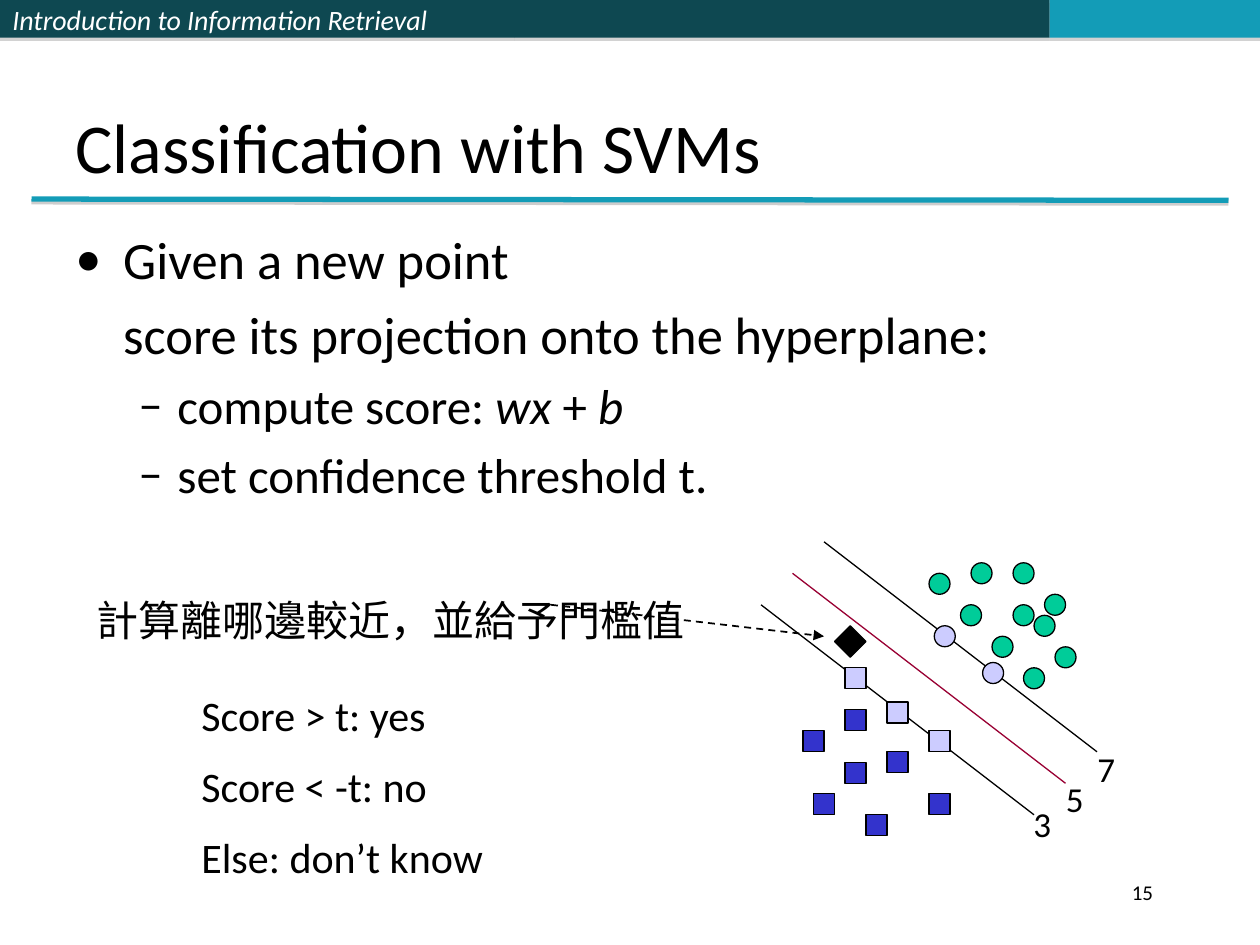
from lxml import etree
from pptx import Presentation
from pptx import util as u
from pptx.dml.color import RGBColor
from pptx.enum import dml, shapes, text
from pptx.oxml import ns

WIDTH, HEIGHT = 10, 7.5
BLACK = RGBColor(0x00, 0x00, 0x00)
WHITE = RGBColor(0xFF, 0xFF, 0xFF)
DARK_TEAL = RGBColor(0x0E, 0x48, 0x51)
TEAL = RGBColor(0x13, 0x9C, 0xB7)
GREEN = RGBColor(0x00, 0xCC, 0x99)
BLUE = RGBColor(0x33, 0x33, 0xCC)
LAVENDER = RGBColor(0xCC, 0xCC, 0xFF)
CRIMSON = RGBColor(0x99, 0x00, 0x33)

KIND = shapes.MSO_SHAPE
CELL = 1 / 12
MARKER = 2

POSITIVES = [(20, 2), (24, 6), (22, 9), (28, 10), (25, 12), (24, 2), (16, 3),
             (26, 7), (27, 5), (19, 6)]
NEGATIVES = [(8, 16), (10, 26), (12, 20), (16, 24), (4, 18), (8, 21), (5, 24)]
POSITIVE_SUPPORTS = [(16.5, 8), (21.1, 11.5)]
NEGATIVE_SUPPORTS = [(12, 15.25), (16, 18), (8, 12)]
BOUNDARIES = [((3, 3), (29, 23), CRIMSON), ((6, 0), (32, 20), BLACK),
              ((0, 6), (26, 26), BLACK)]
SCORES = [("3", 24.75, 24.25), ("5", 27.85, 21.85), ("7", 30.85, 19)]


def inches(*values):
    return [u.Inches(value) for value in values]


def child(parent, tag, **attributes):
    return etree.SubElement(parent, ns.qn(tag), attributes)


def cast_shadow(shape, opacity=35, distance=1.8):
    effects = child(shape._element.spPr, "a:effectLst")
    shadow = child(effects, "a:outerShdw", dist=str(u.Pt(distance)),
                   dir="5400000", rotWithShape="0")
    color = child(shadow, "a:srgbClr", val="808080")
    child(color, "a:alpha", val=str(opacity * 1000))


def write(paragraph, content, size=24, font="Calibri", color=BLACK,
          italic=False, align=text.PP_ALIGN.LEFT, before=0, margin=0,
          bullet=None, hanging=0):
    paragraph.alignment = align
    paragraph.space_before = u.Pt(before)
    properties = paragraph._p.get_or_add_pPr()
    properties.set("marL", str(u.Inches(margin)))
    properties.set("indent", str(u.Inches(-hanging)))
    if bullet:
        child(properties, "a:buFont", typeface="Calibri")
        child(properties, "a:buChar", char=bullet)
    runs = [(content, italic)] if isinstance(content, str) else content
    for words, slanted in runs:
        run = paragraph.add_run()
        run.text = words
        run.font.size = u.Pt(size)
        run.font.name = font
        run.font.italic = slanted
        run.font.color.rgb = color
        child(run._r.get_or_add_rPr(), "a:ea", typeface=font)


def add_text(slide, box, lines, wrap=True, anchor=text.MSO_ANCHOR.TOP, **style):
    frame = slide.shapes.add_textbox(*inches(*box)).text_frame
    frame.word_wrap = wrap
    frame.vertical_anchor = anchor
    for index, (content, extra) in enumerate(lines):
        paragraph = frame.add_paragraph() if index else frame.paragraphs[0]
        write(paragraph, content, **{**style, **extra})


def add_block(slide, kind, box, fill, outline=None):
    shape = slide.shapes.add_shape(kind, *inches(*box))
    shape.fill.solid()
    shape.fill.fore_color.rgb = fill
    if outline is None:
        shape.line.fill.background()
    else:
        shape.shadow.inherit = False
        shape.line.color.rgb = outline
        shape.line.width = u.Pt(0.75)
    return shape


def add_line(slide, start, end, color, width=0.75, shadow=False):
    line = slide.shapes.add_connector(shapes.MSO_CONNECTOR.STRAIGHT,
                                      *inches(*start, *end))
    line.line.color.rgb = color
    line.line.width = u.Pt(width)
    if shadow:
        cast_shadow(line, 38, 1.6)
    else:
        child(line._element.spPr, "a:effectLst")
    return line


def build_header(slide, left, top, width, height):
    segments = [(0, 0.408, DARK_TEAL), (0.408, 0.425, DARK_TEAL),
                (0.833, 0.167, TEAL)]
    bars = []
    for start, share, color in segments:
        box = (left + start * width, top, share * width, height)
        bar = add_block(slide, KIND.RECTANGLE, box, color)
        cast_shadow(bar)
        bars.append(bar)
    frame = bars[0].text_frame
    frame.vertical_anchor = text.MSO_ANCHOR.MIDDLE
    write(frame.paragraphs[0], "Introduction to Information Retrieval",
          size=16, color=WHITE, italic=True)


def build_title(slide, left, top, width, height):
    add_line(slide, (0.25, top + height + 0.04),
             (WIDTH - 0.25, top + height + 0.05), TEAL, 3, shadow=True)
    title = slide.shapes.title
    title.left, title.top, title.width, title.height = inches(left, top, width, height)
    frame = title.text_frame
    frame.auto_size = text.MSO_AUTO_SIZE.NONE
    frame.vertical_anchor = text.MSO_ANCHOR.BOTTOM
    write(frame.paragraphs[0], "Classification with SVMs", size=40)


def build_body(slide, *box):
    top_level = dict(size=30, before=7, margin=0.38)
    step = dict(size=28, before=6, margin=0.81, hanging=0.31, bullet="–")
    formula = [("compute score: ", False), ("wx", True), (" + ", False), ("b", True)]
    add_text(slide, box, [
        ("Given a new point", dict(top_level, hanging=0.38, bullet="•")),
        ("score its projection onto the hyperplane:", top_level),
        (formula, step),
        ("set confidence threshold t.", step),
    ])


def build_diagram(slide, left, top):
    def place(column, row):
        return left + column * CELL, top + row * CELL

    def mark(kind, points, fill, cells=MARKER):
        for point in points:
            box = (*place(*point), cells * CELL, cells * CELL)
            add_block(slide, kind, box, fill, BLACK)

    mark(KIND.OVAL, POSITIVES, GREEN)
    mark(KIND.RECTANGLE, NEGATIVES, BLUE)
    for start, end, color in BOUNDARIES:
        add_line(slide, place(*start), place(*end), color)
    mark(KIND.OVAL, POSITIVE_SUPPORTS, LAVENDER)
    mark(KIND.RECTANGLE, NEGATIVE_SUPPORTS, LAVENDER)
    mark(KIND.DIAMOND, [(7, 8)], BLACK, cells=3)
    for score, column, row in SCORES:
        add_text(slide, (*place(column, row), 0.35, 0.44), [(score, {})],
                 wrap=False, size=20, before=4)
    pointer = add_line(slide, place(-20, 6), place(6, 9), BLACK, 1)
    pointer.line.dash_style = dml.MSO_LINE.DASH
    child(pointer.line._get_or_add_ln(), "a:tailEnd", type="triangle")


def build_rules(slide, *box):
    rules = ["Score > t: yes", "Score < -t: no", "Else: don’t know"]
    add_text(slide, box, [(rule, {}) for rule in rules], before=12)


def build_note(slide, *box):
    add_text(slide, box, [("計算離哪邊較近，並給予門檻值", {})], wrap=False,
             font="Noto Sans CJK SC")


def build_page_number(slide, *box):
    add_text(slide, box, [("15", {})], size=12, align=text.PP_ALIGN.RIGHT,
             anchor=text.MSO_ANCHOR.MIDDLE)


def main():
    presentation = Presentation()
    presentation.slide_width, presentation.slide_height = inches(WIDTH, HEIGHT)
    slide = presentation.slides.add_slide(presentation.slide_layouts[5])
    build_header(slide, 0, 0, WIDTH, 0.04 * HEIGHT)
    build_title(slide, 0.5, 0.11, 0.9 * WIDTH, 1.43)
    build_page_number(slide, 7.17, 6.83, 2.08, 0.5)
    build_body(slide, 0.5, 1.75, 0.9 * WIDTH, 5.33)
    build_diagram(slide, 6.04, 4.3)
    build_rules(slide, 1.5, 5.42, 3.17, 1.72)
    build_note(slide, 0.67, 4.67, 4.87, 0.5)
    presentation.save("out.pptx")


if __name__ == "__main__":
    main()
